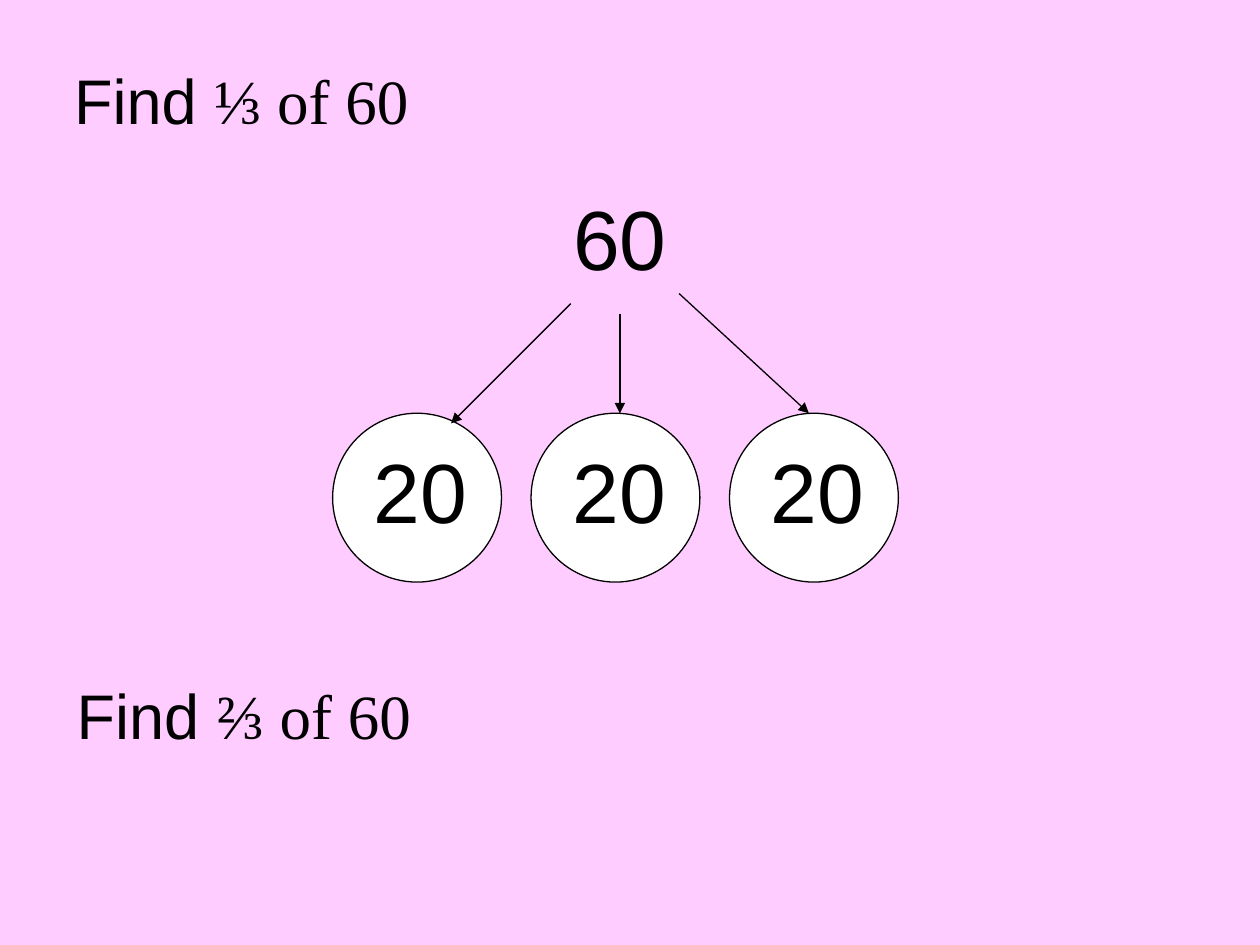
from lxml import etree
from pptx import Presentation
from pptx import util as u
from pptx.dml.color import RGBColor
from pptx.enum import shapes, text
from pptx.oxml.ns import qn

COLORS = {"background": "FFCCFF", "ink": "000000", "circle": "FFFFFF"}
SANS, SERIF = "Arial", "Times New Roman"


def rgb(name):
    return RGBColor.from_string(COLORS[name])


def add_text(paragraph, content, *, size, font=SANS, color="ink"):
    run = paragraph.add_run()
    run.text = content
    run.font.size = u.Pt(size)
    run.font.name = font
    run.font.color.rgb = rgb(color)


class FractionSlide:
    line_width = u.Pt(0.75)
    question_size = 36
    number_size = 48

    def __init__(self, presentation):
        self.slide = presentation.slides.add_slide(presentation.slide_layouts[6])
        fill = self.slide.background.fill
        fill.solid()
        fill.fore_color.rgb = rgb("background")

    def label(self, left, top, width, height):
        """Add an unwrapped text box and return its paragraph."""
        box = self.slide.shapes.add_textbox(
            u.Inches(left), u.Inches(top), u.Inches(width), u.Inches(height))
        frame = box.text_frame
        frame.word_wrap = False
        frame.auto_size = text.MSO_AUTO_SIZE.SHAPE_TO_FIT_TEXT
        return frame.paragraphs[0]

    def question(self, left, top, fraction):
        paragraph = self.label(left, top, 2.85, 0.7)
        add_text(paragraph, "Find ", size=self.question_size)
        add_text(paragraph, f"{fraction} of 60", size=self.question_size, font=SERIF)

    def number(self, left, top, value):
        add_text(self.label(left, top, 0.94, 0.9), value, size=self.number_size)

    def circle(self, left, top, diameter):
        circle = self.slide.shapes.add_shape(
            shapes.MSO_SHAPE.OVAL, u.Inches(left), u.Inches(top),
            u.Inches(diameter), u.Inches(diameter))
        circle.shadow.inherit = False
        circle.fill.solid()
        circle.fill.fore_color.rgb = rgb("circle")
        self.outline(circle)

    def arrow(self, start, end):
        arrow = self.slide.shapes.add_connector(
            shapes.MSO_CONNECTOR.STRAIGHT, *(u.Inches(v) for v in (*start, *end)))
        self.outline(arrow)
        properties = arrow.line._get_or_add_ln()
        etree.SubElement(properties, qn("a:tailEnd"), type="triangle")
        etree.SubElement(properties.getparent(), qn("a:effectLst"))

    def outline(self, shape):
        shape.line.color.rgb = rgb("ink")
        shape.line.width = self.line_width


def main():
    presentation = Presentation()
    presentation.slide_width = u.Inches(10)
    presentation.slide_height = u.Inches(7.5)
    page = FractionSlide(presentation)

    part_lefts = [2.64 + 1.575 * part for part in range(3)]
    part_top = 3.28

    page.question(0.49, 0.44, "⅓")
    for left in part_lefts:
        page.circle(left, part_top, 1.34)
    page.number(4.45, 1.43, "60")
    for start, end in [
        ((4.53, 2.41), (3.58, 3.36)),
        ((4.92, 2.49), (4.92, part_top)),
        ((5.39, 2.33), (6.42, part_top)),
    ]:
        page.arrow(start, end)
    for left in part_lefts:
        page.number(left + 0.23, part_top + 0.16, "20")
    page.question(0.51, 5.32, "⅔")

    presentation.save("out.pptx")


if __name__ == "__main__":
    main()
